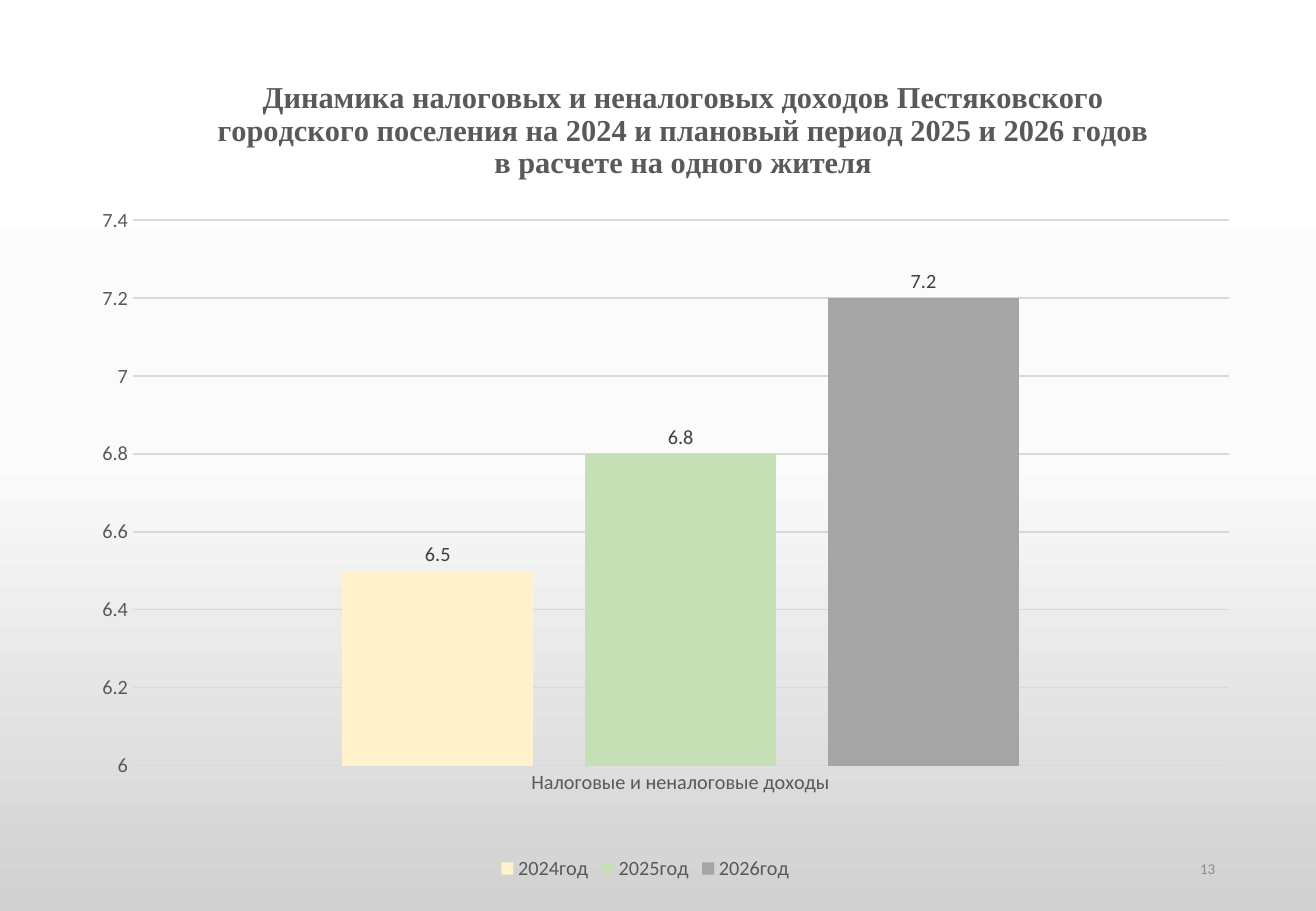
from copy import deepcopy

from pptx import Presentation
from pptx.chart.data import CategoryChartData
from pptx.dml.color import RGBColor
from pptx.enum.chart import XL_CHART_TYPE, XL_LABEL_POSITION, XL_LEGEND_POSITION, XL_TICK_MARK
from pptx.enum.text import MSO_ANCHOR, PP_ALIGN
from pptx.oxml import parse_xml
from pptx.oxml.ns import nsdecls, qn
from pptx.util import Inches, Pt

COLUMNS = XL_CHART_TYPE.COLUMN_CLUSTERED
OUTSIDE_END = XL_LABEL_POSITION.OUTSIDE_END
LEGEND_BOTTOM = XL_LEGEND_POSITION.BOTTOM
NO_TICK = XL_TICK_MARK.NONE
MIDDLE = MSO_ANCHOR.MIDDLE
CENTER, RIGHT = PP_ALIGN.CENTER, PP_ALIGN.RIGHT

# Content
TITLE = ("Динамика налоговых и неналоговых доходов Пестяковского городского "
         "поселения на 2024 и плановый период 2025 и 2026 годов в расчете "
         "на одного жителя")
CATEGORIES = ["Налоговые и неналоговые доходы"]
SERIES = [  # name, value, colour
    ("2024год", 6.5, "FFF2CC"),
    ("2025год", 6.8, "C5E0B4"),
    ("2026год", 7.2, "A5A5A5"),
]
SCALE = (6, 7.4, 0.2)  # minimum, maximum, step
PAGE_NUMBER = "13"

# Positions: inches on the slide, fractions inside the chart
SLIDE_SIZE = (10.83, 7.5)
CHART_BOX = (0.36, 0.46, 9.9, 6.83)
NUMBER_BOX = (7.66, 6.95, 2.44, 0.4)
TITLE_AT = {"x": 0.14, "y": 0.02}
PLOT_AT = {"x": 0.07, "y": 0.2, "w": 0.91, "h": 0.66}
PLOT_AT.update(x=0.074, y=0.198, w=0.911, h=0.658)

THEME = {
    "background": [(0, "FFFFFF"), (0.5, "FBFBFB"), (1, "D1D1D1")],
    "body_font": "Calibri",
    "title_font": "Times New Roman",
    "text": "595959",
    "label": "404040",
    "number": "8C8C8C",
    "line": "D9D9D9",
    "title_size": 18,
    "chart_size": 12,
    "number_size": 8.9,
}


def set_font(font, size=THEME["chart_size"], color=THEME["text"],
             name=THEME["body_font"], bold=False):
    font.size, font.name, font.bold = Pt(size), name, bold
    font.color.rgb = RGBColor.from_string(color)


def write_text(tf, text, align=CENTER, **font):
    p = tf.paragraphs[0]
    p.alignment = align
    r = p.add_run()
    r.text = text
    set_font(r.font, **font)


def set_line(line):
    line.color.rgb = RGBColor.from_string(THEME["line"])
    line.width = Pt(0.75)


def set_layout(parent, index, target="", **fractions):
    """Fix the place of a chart part as fractions of the chart."""
    for old in parent.findall(qn("c:layout")):
        parent.remove(old)
    inner = f'<c:layoutTarget val="{target}"/>' if target else ""
    modes = "".join(f'<c:{k}Mode val="edge"/>' for k in "xy")
    values = "".join(f'<c:{k} val="{v}"/>' for k, v in fractions.items())
    parent.insert(index, parse_xml(
        f'<c:layout {nsdecls("c")}><c:manualLayout>{inner}{modes}{values}'
        "</c:manualLayout></c:layout>"))


prs = Presentation()
prs.slide_width, prs.slide_height = map(Inches, SLIDE_SIZE)
s = prs.slides.add_slide(prs.slide_layouts[6])

# Background gradient, top to bottom
fill = s.background.fill
fill.gradient()
fill.gradient_angle = 270
stop_list = s._element.xpath(".//a:gsLst")[0]
stop_list.insert(1, deepcopy(stop_list[0]))
for stop, (position, color) in zip(fill.gradient_stops, THEME["background"]):
    stop.position = position
    stop.color.rgb = RGBColor.from_string(color)

# Chart
data = CategoryChartData()
data.categories = CATEGORIES
for name, value, _ in SERIES:
    data.add_series(name, [value])
chart = s.shapes.add_chart(COLUMNS, *map(Inches, CHART_BOX), data).chart
set_font(chart.font)
set_layout(chart._chartSpace.chart.plotArea, 0, "inner", **PLOT_AT)

# Chart title
chart.has_title = True
title = chart.chart_title
write_text(title.text_frame, TITLE, size=THEME["title_size"],
           name=THEME["title_font"], bold=True)
title.include_in_layout = False
set_layout(title._element, 1, **TITLE_AT)

# Columns and their labels
plot = chart.plots[0]
plot.gap_width, plot.overlap = 219, -27
plot.vary_by_categories = False
for series, (_, _, color) in zip(plot.series, SERIES):
    series.format.fill.solid()
    series.format.fill.fore_color.rgb = RGBColor.from_string(color)
    labels = series.data_labels
    labels.show_value = True
    labels.position = OUTSIDE_END
    set_font(labels.font, color=THEME["label"])

# Axes
cat_axis, val_axis = chart.category_axis, chart.value_axis
for axis in (cat_axis, val_axis):
    axis.major_tick_mark = axis.minor_tick_mark = NO_TICK
    set_font(axis.tick_labels.font)
set_line(cat_axis.format.line)
val_axis.format.line.fill.background()
val_axis.minimum_scale, val_axis.maximum_scale, val_axis.major_unit = SCALE
val_axis.has_major_gridlines = True
set_line(val_axis.major_gridlines.format.line)

# Legend
chart.has_legend = True
chart.legend.position = LEGEND_BOTTOM
chart.legend.include_in_layout = False
set_font(chart.legend.font)

# Page number
tf = s.shapes.add_textbox(*map(Inches, NUMBER_BOX)).text_frame
tf.word_wrap = True
tf.vertical_anchor = MIDDLE
write_text(tf, PAGE_NUMBER, align=RIGHT, size=THEME["number_size"],
           color=THEME["number"])

prs.save("out.pptx")
